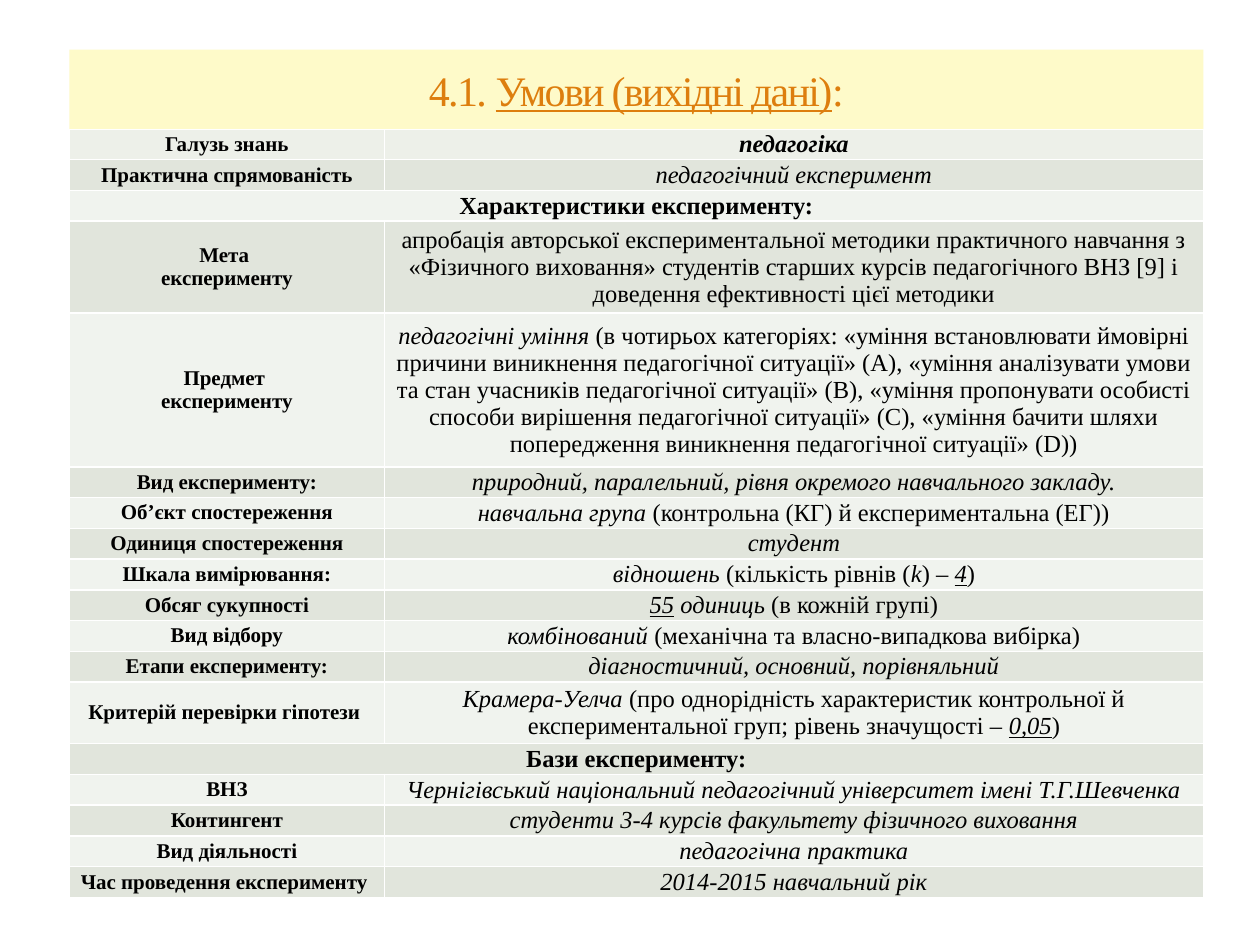
import pptx
import pptx.util
import pptx.dml.color
import pptx.enum.text

Cm = pptx.util.Cm
Pt = pptx.util.Pt
RGBColor = pptx.dml.color.RGBColor
CENTER = pptx.enum.text.PP_ALIGN.CENTER
MIDDLE = pptx.enum.text.MSO_ANCHOR.MIDDLE

BLACK = RGBColor(0x00, 0x00, 0x00)
ORANGE = RGBColor(0xDD, 0x7E, 0x0E)
CREAM = RGBColor(0xFE, 0xFA, 0xC9)
HEAD = RGBColor(0xED, 0xF0, 0xE9)
DARK = RGBColor(0xE1, 0xE5, 0xDC)
LIGHT = RGBColor(0xF0, 0xF3, 0xEE)

ROW, GOAL_ROW, SUBJECT_ROW, TEST_ROW = 0.62, 1.85, 3.1, 1.24

TITLE = [("4.1. ", ""), ("Умови (вихідні дані)", "u"), (":", "")]

ROWS = [
    (ROW, ["Галузь знань"], [("педагогіка", "bi")]),
    (ROW, ["Практична спрямованість"], [("педагогічний експеримент", "i")]),
    (ROW, ["Характеристики експерименту:"], None),
    (GOAL_ROW, ["Мета ", "експерименту"], [
        ("апробація авторської експериментальної методики практичного навчання з "
         "«Фізичного виховання» студентів старших курсів педагогічного ВНЗ [9] і "
         "доведення ефективності цієї методики", "")]),
    (SUBJECT_ROW, ["Предмет ", "експерименту"], [
        ("педагогічні уміння", "i"),
        (" (в чотирьох категоріях: «уміння встановлювати ймовірні причини виникнення "
         "педагогічної ситуації» (А), «уміння аналізувати умови та стан учасників "
         "педагогічної ситуації» (В), «уміння пропонувати особисті способи вирішення "
         "педагогічної ситуації» (С), «уміння бачити шляхи попередження виникнення "
         "педагогічної ситуації» (D))", "")]),
    (ROW, ["Вид експерименту:"],
     [("природний, паралельний, рівня окремого навчального закладу.", "i")]),
    (ROW, ["Об’єкт спостереження"],
     [("навчальна група ", "i"), ("(контрольна (КГ) й експериментальна (ЕГ))", "")]),
    (ROW, ["Одиниця спостереження"], [("студент", "i")]),
    (ROW, ["Шкала вимірювання:"],
     [("відношень ", "i"), ("(кількість рівнів (", ""), ("k", "i"), (") – ", ""),
      ("4", "iu"), (")", "")]),
    (ROW, ["Обсяг сукупності"],
     [("55", "iu"), (" одиниць ", "i"), ("(в кожній групі)", "")]),
    (ROW, ["Вид відбору"],
     [("комбінований ", "i"), ("(механічна та власно-випадкова вибірка)", "")]),
    (ROW, ["Етапи експерименту:"], [("діагностичний, основний, порівняльний", "i")]),
    (TEST_ROW, ["Критерій перевірки гіпотези "], [
        ("Крамера-Уелча ", "i"),
        ("(про однорідність характеристик контрольної й експериментальної груп; "
         "рівень значущості – ", ""), ("0,05", "iu"), (")", "")]),
    (ROW, ["Бази експерименту:"], None),
    (ROW, ["ВНЗ"],
     [("Чернігівський національний педагогічний університет імені Т.Г.Шевченка", "i")]),
    (ROW, ["Контингент"], [("студенти 3-4 курсів факультету фізичного виховання", "i")]),
    (ROW, ["Вид діяльності"], [("педагогічна практика", "i")]),
    (ROW, ["Час проведення експерименту "], [("2014-2015 навчальний рік", "i")]),
]


class Deck:
    font = "Times New Roman"

    def __init__(self, width, height):
        self.prs = pptx.Presentation()
        self.prs.slide_width, self.prs.slide_height = Cm(width), Cm(height)
        self.s = self.prs.slides.add_slide(self.prs.slide_layouts[6])

    def text(self, tf, paragraphs, size, color=BLACK, spacing=None):
        tf.word_wrap = True
        for i, runs in enumerate(paragraphs):
            p = tf.add_paragraph() if i else tf.paragraphs[0]
            p.alignment = CENTER
            for content, style in runs:
                r = p.add_run()
                r.text = content
                r.font.name, r.font.size = self.font, Pt(size)
                r.font.color.rgb = color
                r.font.bold = "b" in style
                r.font.italic = "i" in style
                r.font.underline = "u" in style
                if spacing is not None:
                    r._r.get_or_add_rPr().set("spc", str(spacing * 100))

    def title(self, runs, left, top, width, height):
        sp = self.s.shapes.add_textbox(Cm(left), Cm(top), Cm(width), Cm(height))
        sp.fill.solid()
        sp.fill.fore_color.rgb = CREAM
        tf = sp.text_frame
        tf.vertical_anchor = MIDDLE
        tf.margin_left = tf.margin_right = tf.margin_top = tf.margin_bottom = 0
        self.text(tf, [runs], 24, ORANGE, -1)

    def cell(self, cell, paragraphs, size, fill):
        cell.fill.solid()
        cell.fill.fore_color.rgb = fill
        cell.vertical_anchor = MIDDLE
        cell.margin_left = cell.margin_right = Cm(0.1)
        cell.margin_top = cell.margin_bottom = 0
        self.text(cell.text_frame, paragraphs, size)

    def table(self, rows, left, top, widths):
        height = sum(row[0] for row in rows)
        table = self.s.shapes.add_table(
            len(rows), len(widths), Cm(left), Cm(top), Cm(sum(widths)), Cm(height)).table
        for column, width in zip(table.columns, widths):
            column.width = Cm(width)
        for i, (height, labels, value) in enumerate(rows):
            table.rows[i].height = Cm(height)
            fill = HEAD if i == 0 else DARK if i % 2 else LIGHT
            label, content = table.cell(i, 0), table.cell(i, 1)
            if value is None:
                label.merge(content)
            else:
                self.cell(content, [value], 14, fill)
            self.cell(label, [[(line, "b")] for line in labels],
                      14 if value is None else 12, fill)


def main():
    deck = Deck(25.4, 19.05)
    deck.table(ROWS, 1.4, 2.6, [6.35, 16.51])
    deck.title(TITLE, 1.4, 1, 22.86, 1.6)
    deck.prs.save("out.pptx")


if __name__ == "__main__":
    main()
